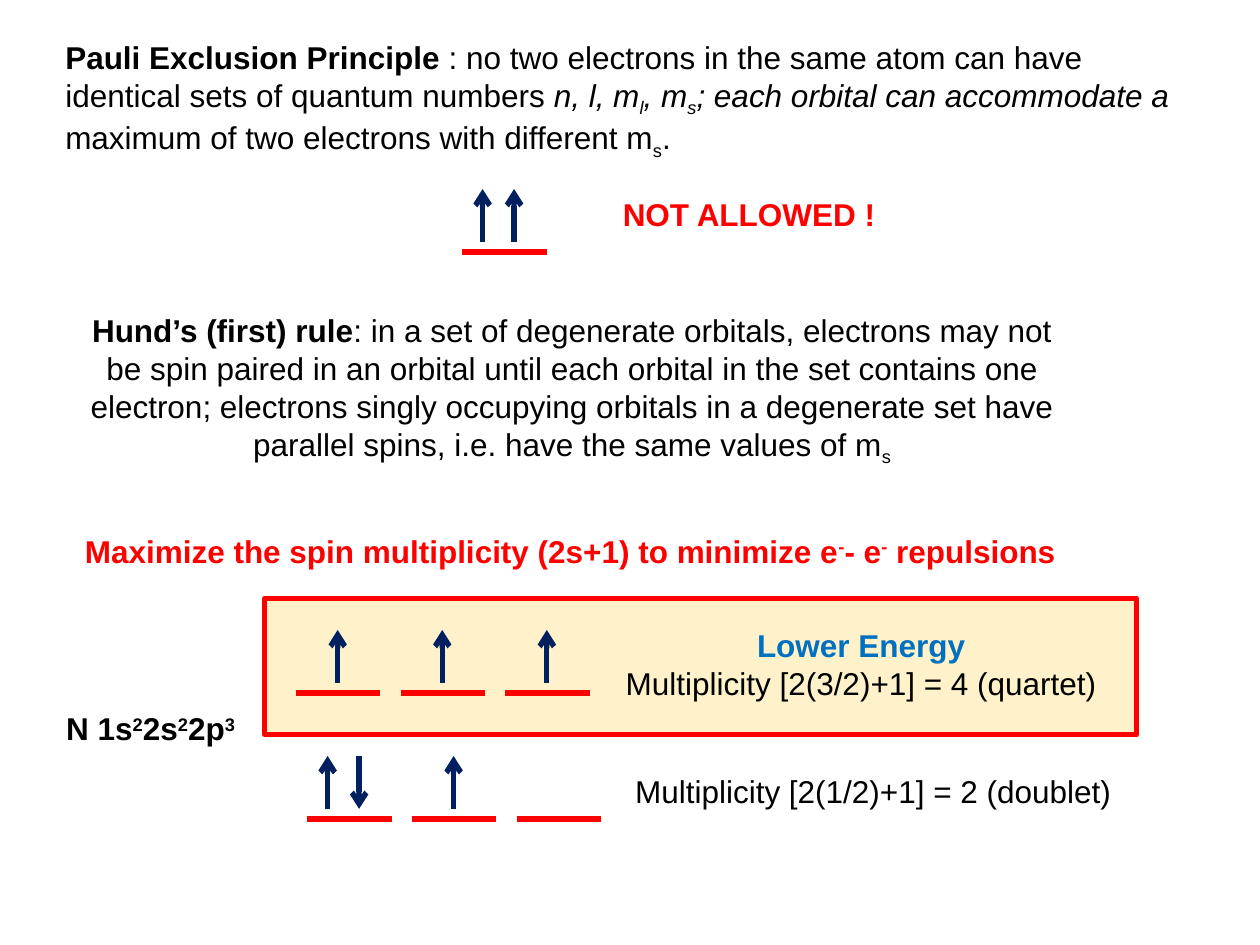
from pptx import Presentation
from pptx.dml.color import RGBColor
from pptx.enum.shapes import MSO_CONNECTOR, MSO_SHAPE
from pptx.enum.text import MSO_AUTO_SIZE, PP_ALIGN
from pptx.oxml.ns import qn
from pptx.util import Inches, Pt
from lxml.etree import SubElement

THEME = {
    "font": "Arial", "size": 18, "line": 3,
    "text": "000000", "accent": "FF0000", "spin": "002060",
    "energy": "0070C0", "highlight": "FFC000",
}
BASELINES = {"_": "-25000", "^": "30000"}

# Run styles: b bold, i italic, _ subscript, ^ superscript
PAULI = [("text", [
    ("Pauli Exclusion Principle", "b"),
    (" : no two electrons in the same atom can have identical sets of quantum numbers ", ""),
    ("n, l, m", "i"), ("l", "i_"), (", m", "i"), ("s", "i_"),
    ("; each orbital can accommodate a ", "i"),
    ("maximum of two electrons with different m", ""), ("s", "_"), (".", ""),
])]
HUND = [("text", [
    ("Hund’s (first) rule", "b"),
    (": in a set of degenerate orbitals, electrons may not be spin paired in an orbital "
     "until each orbital in the set contains one electron; electrons singly occupying "
     "orbitals in a degenerate set have parallel spins, i.e. have the same values of m", ""),
    ("s", "_"),
])]
MAXIMIZE = [("accent", [
    ("Maximize the spin multiplicity (2s+1) to minimize e", "b"), ("-", "b^"),
    ("- e", "b"), ("-", "b^"), (" repulsions", "b"),
])]
NITROGEN = [("text", [
    ("N 1s", "b"), ("2", "b^"), ("2s", "b"), ("2", "b^"), ("2p", "b"), ("3", "b^"),
])]
QUARTET = [
    ("energy", [("Lower Energy", "b")]),
    ("text", [("Multiplicity [2(3/2)+1] = 4 (quartet)", "")]),
]
DOUBLET = [("text", [("Multiplicity [2(1/2)+1] = 2 (doublet)", "")])]
NOT_ALLOWED = [("accent", [("NOT ALLOWED !", "b")])]

CENTER, LEFT = PP_ALIGN.CENTER, PP_ALIGN.LEFT
STATEMENTS = [
    (HUND, (0.58, 2.42, 7.92, 1.31), CENTER, True),
    (PAULI, (0.42, 0.25, 9, 1.01), LEFT, True),
    (MAXIMIZE, (0.5, 4.17, 8.05, 0.4), CENTER, False),
    (NITROGEN, (0.4, 5.58, 1.59, 0.4), CENTER, False),
    (QUARTET, (4.85, 4.92, 3.97, 0.71), CENTER, True),
    (DOUBLET, (4.92, 6.08, 4.02, 0.4), CENTER, False),
    (NOT_ALLOWED, (4.83, 1.5, 2.23, 0.4), CENTER, False),
]
ORBITAL_ROWS = [
    (2.35, 5.5, ["↑", "↑", "↑"]),
    (2.44, 6.5, ["↑↓", "↑", ""]),
    (3.67, 2, ["↑↑"]),
]
LOWER_ENERGY_BOX = (2.1, 4.75, 6.92, 1.08)
ORBITAL_WIDTH, ORBITAL_PITCH = 0.67, 0.83
SPIN_OFFSETS = {0: [], 1: [0.33], 2: [0.16, 0.41]}
SPIN_BOTTOM, SPIN_TOP = 0.08, 0.5


def color(role):
    return RGBColor.from_string(THEME[role])


def add_statement(slide, paragraphs, place, align, wrap):
    frame = slide.shapes.add_textbox(*map(Inches, place)).text_frame
    frame.word_wrap = wrap
    frame.auto_size = MSO_AUTO_SIZE.SHAPE_TO_FIT_TEXT
    for index, (role, pieces) in enumerate(paragraphs):
        paragraph = frame.add_paragraph() if index else frame.paragraphs[0]
        paragraph.alignment = align
        for words, style in pieces:
            run = paragraph.add_run()
            run.text = words
            run.font.name = THEME["font"]
            run.font.size = Pt(THEME["size"])
            run.font.color.rgb = color(role)
            run.font.bold = "b" in style
            run.font.italic = "i" in style
            for mark, baseline in BASELINES.items():
                if mark in style:
                    run.font._element.set("baseline", baseline)


def add_line(slide, start, end, role, arrow=False):
    connector = slide.shapes.add_connector(
        MSO_CONNECTOR.STRAIGHT, *map(Inches, (*start, *end)))
    connector.line.color.rgb = color(role)
    connector.line.width = Pt(THEME["line"])
    if arrow:
        SubElement(connector.line._get_or_add_ln(), qn("a:tailEnd"), type="arrow")
    SubElement(connector._element.spPr, qn("a:effectLst"))


def add_orbitals(slide, left, level, orbitals):
    for index, spins in enumerate(orbitals):
        x = left + index * ORBITAL_PITCH
        add_line(slide, (x, level), (x + ORBITAL_WIDTH, level), "accent")
        for spin, offset in zip(spins, SPIN_OFFSETS[len(spins)]):
            bottom = (x + offset, level - SPIN_BOTTOM)
            top = (x + offset, level - SPIN_TOP)
            start, end = (bottom, top) if spin == "↑" else (top, bottom)
            add_line(slide, start, end, "spin", arrow=True)


def add_highlight(slide):
    box = slide.shapes.add_shape(MSO_SHAPE.RECTANGLE, *map(Inches, LOWER_ENERGY_BOX))
    box.shadow.inherit = False
    box.fill.solid()
    box.fill.fore_color.rgb = color("highlight")
    fill_color = box._element.spPr.find(qn("a:solidFill")).find(qn("a:srgbClr"))
    SubElement(fill_color, qn("a:alpha"), val="21000")
    box.line.color.rgb = color("accent")
    box.line.width = Pt(THEME["line"])


def main():
    deck = Presentation()
    deck.slide_width, deck.slide_height = Inches(10), Inches(7.5)
    slide = deck.slides.add_slide(deck.slide_layouts[6])
    add_highlight(slide)
    for statement in STATEMENTS:
        add_statement(slide, *statement)
    for row in ORBITAL_ROWS:
        add_orbitals(slide, *row)
    deck.save("out.pptx")


if __name__ == "__main__":
    main()
